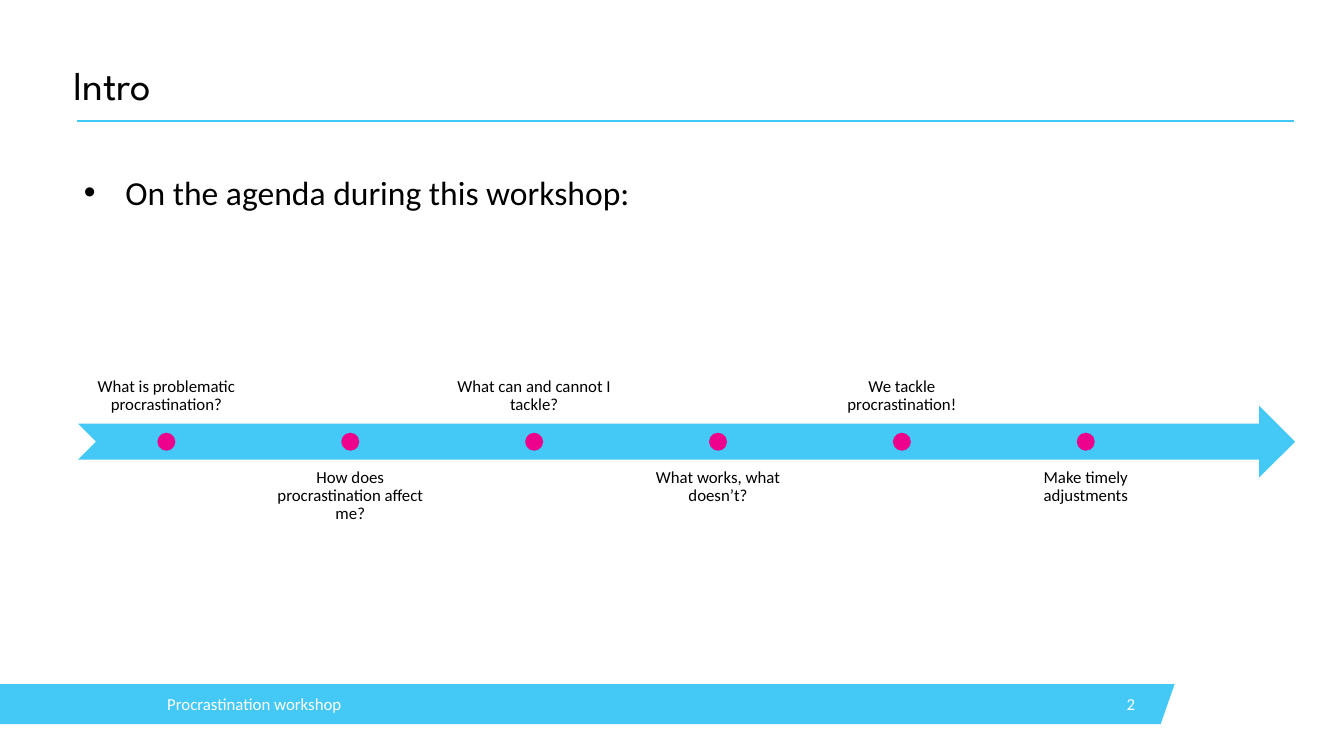
from dataclasses import dataclass

from lxml.etree import SubElement
from pptx import Presentation
from pptx.dml.color import RGBColor
from pptx.enum.shapes import MSO_CONNECTOR as Connector, MSO_SHAPE as Preset
from pptx.enum.text import MSO_ANCHOR as Anchor, PP_ALIGN as Align
from pptx.oxml.ns import qn
from pptx.util import Cm, Pt


@dataclass(frozen=True)
class Theme:
    blue: RGBColor = RGBColor(0x44, 0xC8, 0xF5)
    pink: RGBColor = RGBColor(0xEC, 0x00, 0x8C)
    black: RGBColor = RGBColor(0, 0, 0)
    white: RGBColor = RGBColor(0xFF, 0xFF, 0xFF)
    title_font: str = "League Spartan"
    body_font: str = "Calibri"
    title_size: int = 44
    body_size: int = 36
    small_size: int = 18


@dataclass(frozen=True)
class Box:
    """A rectangle in centimetres."""
    left: float
    top: float
    width: float
    height: float

    def lengths(self) -> tuple:
        return Cm(self.left), Cm(self.top), Cm(self.width), Cm(self.height)


@dataclass(frozen=True)
class TextStyle:
    size: int
    color: RGBColor
    font: str = Theme.body_font
    align: Align = Align.LEFT
    anchor: Anchor = Anchor.TOP
    inset: float | None = None
    line_spacing: float = 1.0


THEME = Theme()
FOOTER_TOP, FOOTER_HEIGHT = 25.86, 1.52
TIMELINE_MIDDLE = 16.7
FIRST_STAGE, STAGE_STEP = 6.29, 6.95
LABEL_WIDTH, LABEL_HEIGHT, LABEL_GAP = 6.63, 2.72, 0.67
ARROW_HEIGHT, DOT_SIZE = 2.72, 0.68

STAGES = [
    "What is problematic procrastination?",
    "How does procrastination affect me?",
    "What can and cannot I tackle?",
    "What works, what doesn’t?",
    "We tackle procrastination!",
    "Make timely adjustments",
]


def add_text(slide, box: Box, text: str, style: TextStyle, bullet_indent: float = 0):
    frame = slide.shapes.add_textbox(*box.lengths()).text_frame
    frame.word_wrap = True
    frame.vertical_anchor = style.anchor
    if style.inset is not None:
        frame.margin_left = frame.margin_right = Cm(style.inset)
        frame.margin_top = frame.margin_bottom = Cm(style.inset)
    frame.text = text
    paragraph = frame.paragraphs[0]
    paragraph.alignment = style.align
    paragraph.line_spacing = style.line_spacing
    if bullet_indent:
        properties = paragraph._p.get_or_add_pPr()
        properties.set("marL", str(Cm(bullet_indent)))
        properties.set("indent", str(-Cm(bullet_indent)))
        SubElement(properties, qn("a:buFont"), typeface="Arial")
        SubElement(properties, qn("a:buChar"), char="•")
    font = paragraph.runs[0].font
    font.name = style.font
    font.size = Pt(style.size)
    font.color.rgb = style.color


def paint(shape, color: RGBColor):
    shape.shadow.inherit = False
    shape.fill.solid()
    shape.fill.fore_color.rgb = color
    shape.line.fill.background()


def add_footer(slide):
    bottom = FOOTER_TOP + FOOTER_HEIGHT
    outline = slide.shapes.build_freeform(Cm(-0.03), Cm(bottom), scale=1.0)
    corners = [(-0.03, FOOTER_TOP), (44.4, FOOTER_TOP), (43.87, bottom)]
    outline.add_line_segments([(Cm(x), Cm(y)) for x, y in corners], close=True)
    paint(outline.convert_to_shape(), THEME.blue)

    add_text(slide, Box(6.32, FOOTER_TOP, 17.15, FOOTER_HEIGHT), "Procrastination workshop",
             TextStyle(THEME.small_size, THEME.white, anchor=Anchor.MIDDLE, inset=0))
    add_text(slide, Box(40.39, FOOTER_TOP, 2.77, FOOTER_HEIGHT), "2",
             TextStyle(THEME.small_size, THEME.white, align=Align.RIGHT, anchor=Anchor.MIDDLE))


def add_heading(slide):
    rule = slide.shapes.add_connector(
        Connector.STRAIGHT, Cm(2.9), Cm(4.57), Cm(48.9), Cm(4.57))
    rule.line.color.rgb = THEME.blue
    rule.line.width = Pt(2.25)
    SubElement(rule._element.spPr, qn("a:effectLst"))
    add_text(slide, Box(2.77, 2.46, 46.05, 1.75), "Intro",
             TextStyle(THEME.title_size, THEME.black, THEME.title_font,
                       inset=0, line_spacing=0.9))


def add_stage(slide, index: int, label: str):
    """Place a dot on the arrow, with its label above or below in turn."""
    center = FIRST_STAGE + index * STAGE_STEP
    above = index % 2 == 0
    label_top = (TIMELINE_MIDDLE - LABEL_GAP - LABEL_HEIGHT if above
                 else TIMELINE_MIDDLE + LABEL_GAP)
    add_text(slide, Box(center - LABEL_WIDTH / 2, label_top, LABEL_WIDTH, LABEL_HEIGHT), label,
             TextStyle(THEME.small_size, THEME.black, align=Align.CENTER,
                       anchor=Anchor.BOTTOM if above else Anchor.TOP,
                       inset=0.36, line_spacing=0.9))
    dot = Box(center - DOT_SIZE / 2, TIMELINE_MIDDLE - DOT_SIZE / 2, DOT_SIZE, DOT_SIZE)
    paint(slide.shapes.add_shape(Preset.OVAL, *dot.lengths()), THEME.pink)


def add_timeline(slide):
    arrow = Box(2.95, TIMELINE_MIDDLE - ARROW_HEIGHT / 2, 46, ARROW_HEIGHT)
    paint(slide.shapes.add_shape(Preset.NOTCHED_RIGHT_ARROW, *arrow.lengths()), THEME.blue)
    for index, label in enumerate(STAGES):
        add_stage(slide, index, label)


def main():
    presentation = Presentation()
    presentation.slide_width, presentation.slide_height = Cm(50.8), Cm(28.58)
    slide = presentation.slides.add_slide(presentation.slide_layouts[6])
    add_footer(slide)
    add_heading(slide)
    add_text(slide, Box(2.92, 6.53, 46.05, 16.97), "On the agenda during this workshop:",
             TextStyle(THEME.body_size, THEME.black, line_spacing=0.9), bullet_indent=1.57)
    add_timeline(slide)
    presentation.save("out.pptx")


if __name__ == "__main__":
    main()
